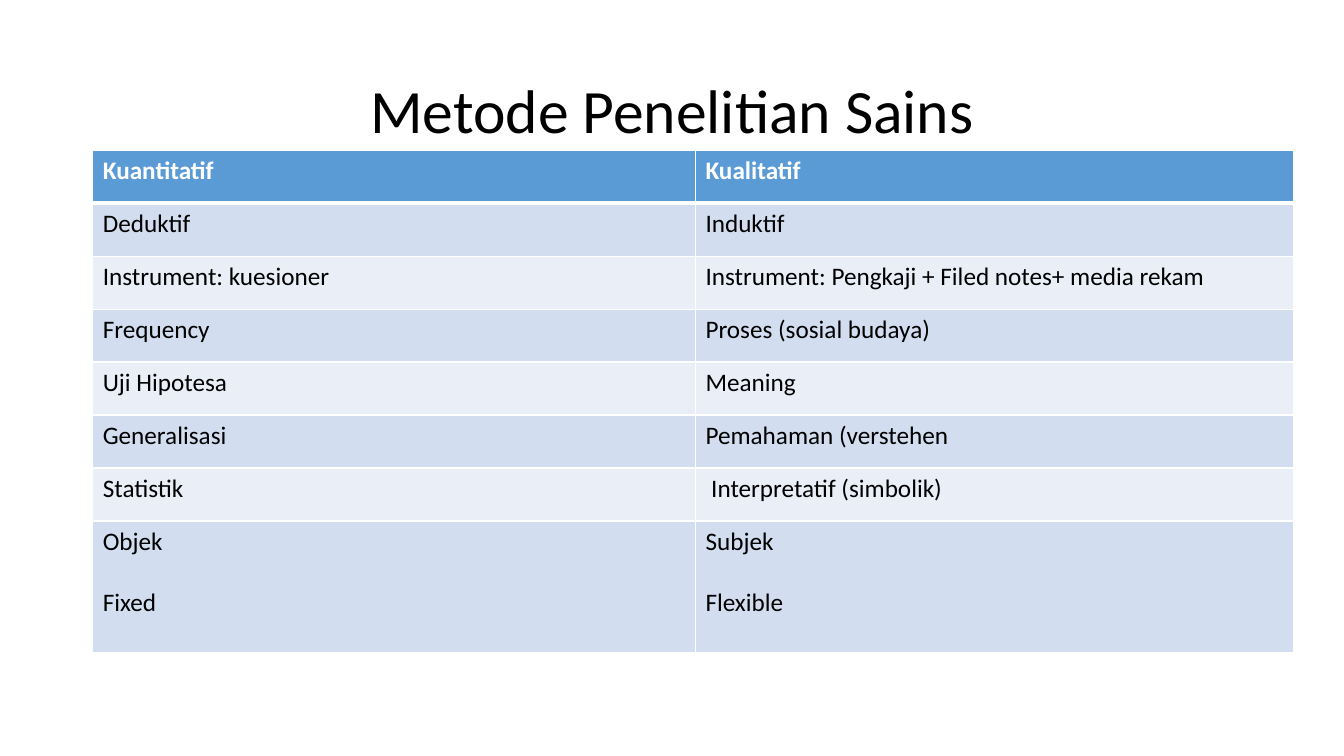
import pptx
import pptx.dml.color
import pptx.enum.text
import pptx.oxml
import pptx.oxml.ns
import pptx.util

Pt = pptx.util.Pt
RGBColor = pptx.dml.color.RGBColor

# Content: each cell is a list of paragraphs separated by line breaks
TITLE = "Metode Penelitian Sains"
COMPARISON = [
    ("Kuantitatif", "Kualitatif"),
    ("Deduktif", "Induktif"),
    ("Instrument: kuesioner", "Instrument: Pengkaji + Filed notes+ media rekam"),
    ("Frequency", "Proses (sosial budaya)"),
    ("Uji Hipotesa", "Meaning"),
    ("Generalisasi", "Pemahaman (verstehen"),
    ("Statistik", " Interpretatif (simbolik)"),
    ("Objek\nFixed", "Subjek\nFlexible"),
]

# Style
FONT = "Calibri"
BLACK = RGBColor(0x00, 0x00, 0x00)
WHITE = RGBColor(0xFF, 0xFF, 0xFF)
HEADER_BLUE = RGBColor(0x5B, 0x9B, 0xD5)
BANDS = [RGBColor(0xEA, 0xEF, 0xF7), RGBColor(0xD2, 0xDE, 0xEF)]
LEFT = 66.25
TABLE_TOP = 107.25
COLUMN_WIDTHS = [430.5, 427.5]
ROW_HEIGHT, LAST_ROW_HEIGHT = 37.85, 94.3
PARAGRAPH_GAP = 22


def format_paragraph(paragraph, size, color, bold=False):
    for run in paragraph.runs:
        run.font.name = FONT
        run.font.size = Pt(size)
        run.font.bold = bold
        run.font.color.rgb = color


def set_borders(cell, bottom, top):
    properties = cell._tc.get_or_add_tcPr()
    widths = {"lnL": 1, "lnR": 1, "lnT": top, "lnB": bottom}
    for index, (side, width) in enumerate(widths.items()):
        line = pptx.oxml.parse_xml(
            f'<a:{side} {pptx.oxml.ns.nsdecls("a")} w="{Pt(width)}">'
            f'<a:solidFill><a:srgbClr val="{WHITE}"/></a:solidFill></a:{side}>'
        )
        properties.insert(index, line)


presentation = pptx.Presentation()
presentation.slide_width, presentation.slide_height = Pt(960), Pt(540)
slide = presentation.slides.add_slide(presentation.slide_layouts[5])

# Title
title = slide.shapes.title
title.left, title.top, title.width, title.height = Pt(LEFT), Pt(28.75), Pt(828), Pt(104.4)
title.text_frame.text = TITLE
title.text_frame.vertical_anchor = pptx.enum.text.MSO_ANCHOR.MIDDLE
heading = title.text_frame.paragraphs[0]
heading.alignment = pptx.enum.text.PP_ALIGN.CENTER
heading.line_spacing = 0.9
format_paragraph(heading, 44, BLACK)

# Comparison table
row_heights = [ROW_HEIGHT] * (len(COMPARISON) - 1) + [LAST_ROW_HEIGHT]
table = slide.shapes.add_table(
    len(COMPARISON), len(COLUMN_WIDTHS), Pt(LEFT), Pt(TABLE_TOP),
    Pt(sum(COLUMN_WIDTHS)), Pt(sum(row_heights)),
).table
for column, width in zip(table.columns, COLUMN_WIDTHS):
    column.width = Pt(width)

for row_index, (row, height) in enumerate(zip(table.rows, row_heights)):
    row.height = Pt(height)
    is_header = row_index == 0
    for cell, text in zip(row.cells, COMPARISON[row_index]):
        cell.text_frame.text = text
        cell.fill.solid()
        cell.fill.fore_color.rgb = HEADER_BLUE if is_header else BANDS[row_index % 2]
        set_borders(cell, bottom=3 if is_header else 1, top=3 if row_index == 1 else 1)
        for position, paragraph in enumerate(cell.text_frame.paragraphs):
            paragraph.space_before = Pt(PARAGRAPH_GAP if position else 0)
            format_paragraph(paragraph, 18, WHITE if is_header else BLACK, is_header)

presentation.save("out.pptx")
